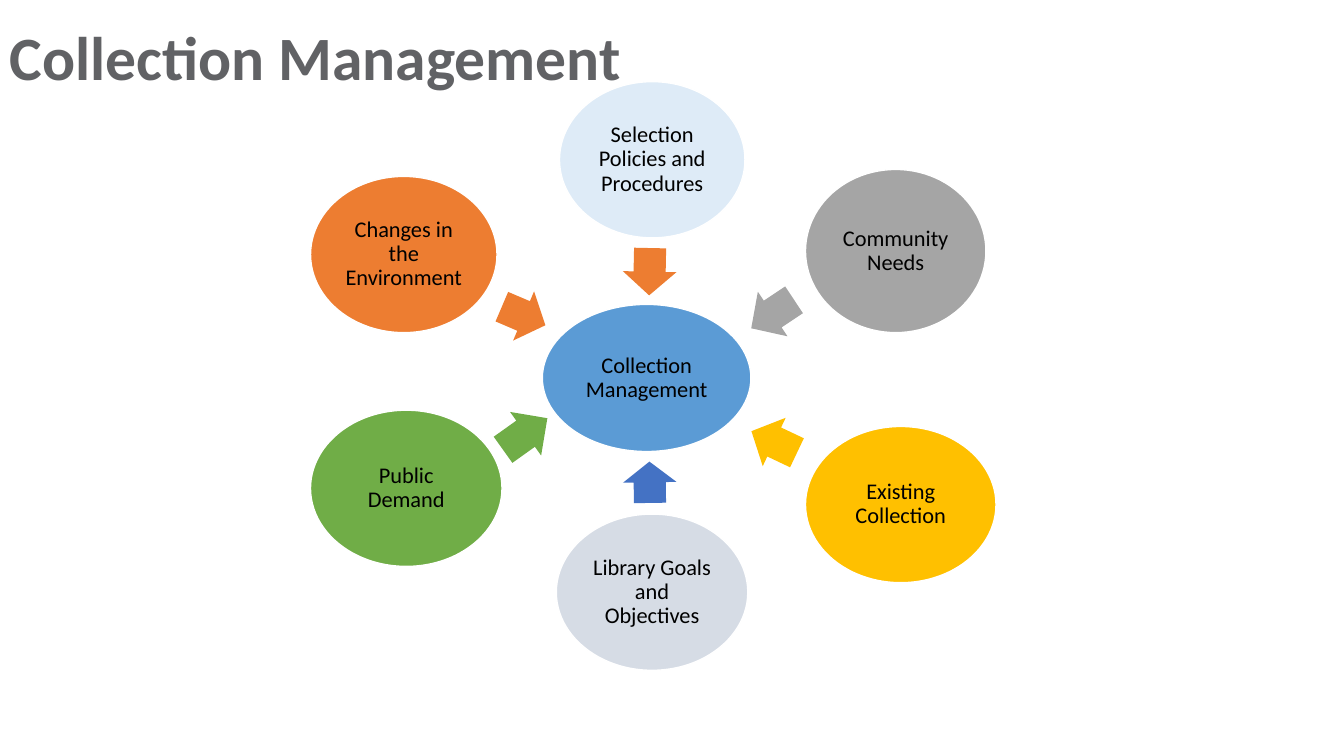
import pptx
import pptx.dml.color
import pptx.enum.shapes
import pptx.enum.text
import pptx.util

Pt = pptx.util.Pt
SHAPES = pptx.enum.shapes.MSO_SHAPE
FONT = "Calibri"
ARROW_HEIGHT = 38.2
COLORS = {
    "title": "616265", "text": "000000", "outline": "FFFFFF", "hub": "5B9BD5",
    "pale_blue": "DEEBF7", "orange": "ED7D31", "gray": "A5A5A5", "gold": "FFC000",
    "pale_gray": "D6DCE5", "blue": "4472C4", "green": "70AD47",
}
# Each factor: text, colour, centre offset and size; arrow colour, centre offset, length, angle.
FACTORS = [
    ("Selection Policies and Procedures", "pale_blue", (4, -155.9), (132.5, 111.6),
     "orange", (2.1, -75.9), 33.8, 91.2),
    ("Community Needs", "gray", (177.9, -90.7), (128.9, 116.6),
     "gray", (90, -45.7), 36.7, 146.4),
    ("Existing Collection", "gold", (181.5, 90.4), (136.1, 111.6),
     "gold", (91.1, 45.7), 36, 205.4),
    ("Library Goals and Objectives", "pale_gray", (3.9, 153), (136.8, 111.6),
     "blue", (2.2, 74.5), 29.5, 269.1),
    ("Public Demand", "green", (-171.7, 78.8), (136.8, 111.6),
     "green", (-86.7, 40), 38.9, 324.5),
    ("Changes in the Environment", "orange", (-173.5, -88.2), (133.2, 111.6),
     "orange", (-87.9, -44.3), 33.8, 23.1),
]


def rgb(name):
    """Return the named colour."""
    return pptx.dml.color.RGBColor.from_string(COLORS[name])


def write(text_frame, text, size, color, bold=False):
    """Fill a frame with one vertically centred, formatted paragraph."""
    text_frame.word_wrap = True
    text_frame.vertical_anchor = pptx.enum.text.MSO_ANCHOR.MIDDLE
    text_frame.text = text
    paragraph = text_frame.paragraphs[0]
    paragraph.line_spacing = 0.9
    font = paragraph.runs[0].font
    font.name, font.size, font.bold = FONT, Pt(size), bold
    font.color.rgb = rgb(color)
    return paragraph


def add_centered(slide, kind, center, size, color):
    """Add a filled preset shape around a centre point."""
    (x, y), (width, height) = center, size
    shape = slide.shapes.add_shape(
        kind, Pt(x - width / 2), Pt(y - height / 2), Pt(width), Pt(height))
    shape.shadow.inherit = False
    shape.fill.solid()
    shape.fill.fore_color.rgb = rgb(color)
    return shape


def add_bubble(slide, center, size, color, text):
    """Add a labelled ellipse with a white outline."""
    bubble = add_centered(slide, SHAPES.OVAL, center, size, color)
    bubble.line.color.rgb = rgb("outline")
    bubble.line.width = Pt(1)
    frame = bubble.text_frame
    frame.margin_left = frame.margin_right = Pt(1.5)
    frame.margin_top = frame.margin_bottom = Pt(1.5)
    paragraph = write(frame, text, 16, "text")
    paragraph.alignment = pptx.enum.text.PP_ALIGN.CENTER


def add_arrow(slide, center, length, angle, color):
    """Add a block arrow turned towards the hub."""
    arrow = add_centered(slide, SHAPES.RIGHT_ARROW, center, (length, ARROW_HEIGHT), color)
    arrow.line.fill.background()
    arrow.adjustments[0] = 0.6
    arrow.adjustments[1] = 0.5
    arrow.rotation = angle


def add_title(slide, left, top, width, height):
    """Add the slide heading in its box."""
    box = slide.shapes.add_textbox(Pt(left), Pt(top), Pt(width), Pt(height))
    write(box.text_frame, "Collection Management", 44, "title", bold=True)


def add_diagram(slide, left, top, width, height):
    """Add the hub in the middle of the box, with its factors and arrows around it."""
    hub_x, hub_y = left + width / 2, top + height / 2
    add_bubble(slide, (hub_x, hub_y), (149, 105.1), "hub", "Collection Management")
    for text, color, offset, size, arrow_color, arrow_offset, length, angle in FACTORS:
        arrow_center = (hub_x + arrow_offset[0], hub_y + arrow_offset[1])
        add_arrow(slide, arrow_center, length, angle, arrow_color)
        add_bubble(slide, (hub_x + offset[0], hub_y + offset[1]), size, color, text)


def main():
    """Build and save the presentation."""
    presentation = pptx.Presentation()
    presentation.slide_width, presentation.slide_height = Pt(960), Pt(540)
    slide = presentation.slides.add_slide(presentation.slide_layouts[6])
    add_title(slide, 0, 0, 827.3, 86.4)
    add_diagram(slide, 211.9, 58, 500, 424)
    presentation.save("out.pptx")


if __name__ == "__main__":
    main()
